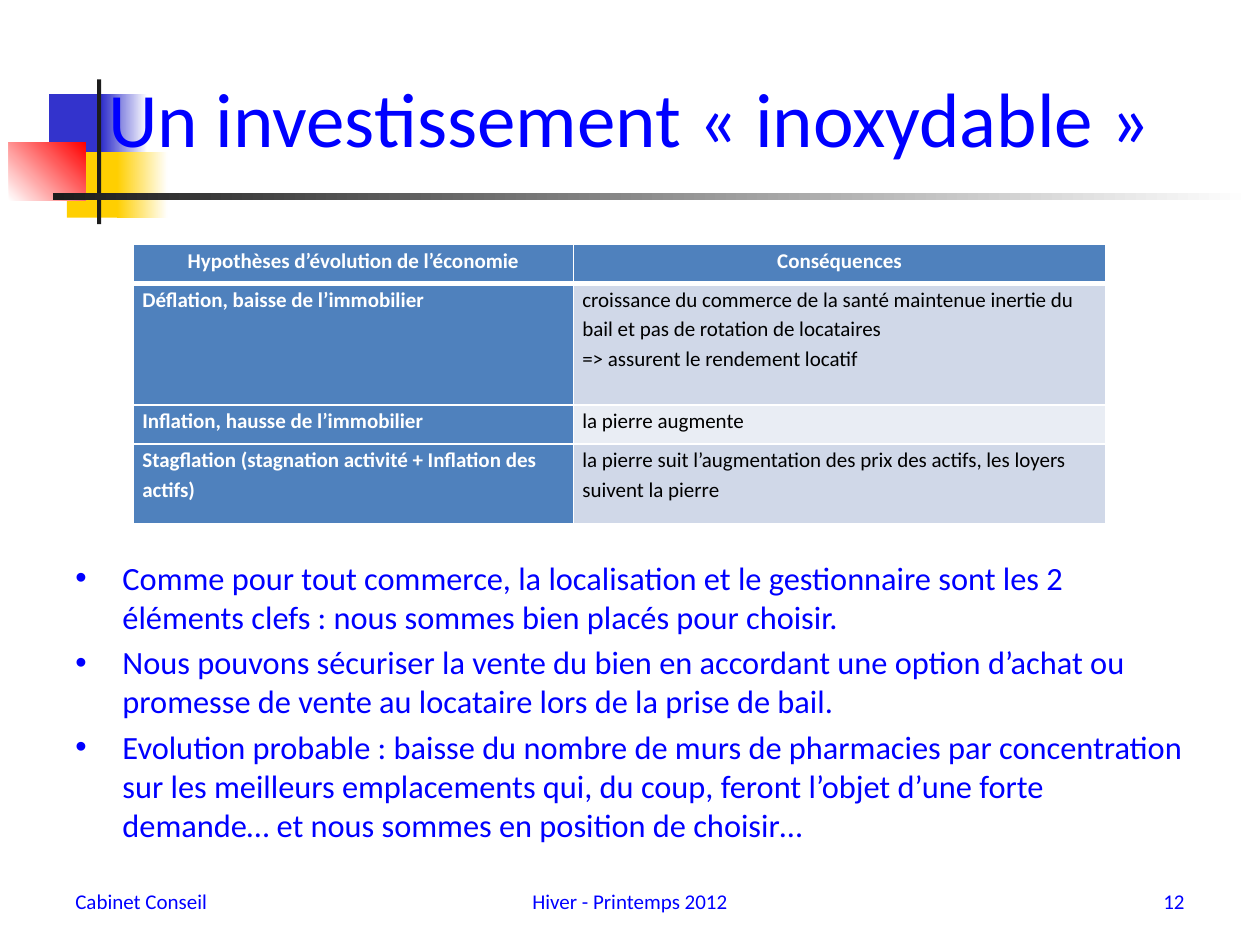
from lxml import etree
from pptx import Presentation
from pptx.dml.color import RGBColor
from pptx.enum.shapes import MSO_SHAPE
from pptx.enum.text import MSO_ANCHOR, PP_ALIGN
from pptx.oxml.ns import qn
from pptx.util import Cm, Pt

RECTANGLE = MSO_SHAPE.RECTANGLE
TOP, MIDDLE = MSO_ANCHOR.TOP, MSO_ANCHOR.MIDDLE
LEFT, CENTER, RIGHT = PP_ALIGN.LEFT, PP_ALIGN.CENTER, PP_ALIGN.RIGHT

THEME = {
    "font": "Calibri",
    "text": "0000FF", "white": "FFFFFF", "black": "000000",
    "blue": "3333CC", "yellow": "FFCF01", "red": "FF0000", "dark": "1C1C1C",
    "header": "4F81BD", "band": "D0D8E8", "light_band": "E9EDF4",
    "title_size": 44, "body_size": 18.5, "small_size": 12,
}

TITLE = "Un investissement «\u00a0inoxydable\u00a0»"
TABLE = [
    ("Hypothèses d’évolution de l’économie", "Conséquences"),
    ("Déflation, baisse de l’immobilier",
     "croissance du commerce de la santé maintenue inertie du bail et pas de "
     "rotation de locataires\n=> assurent le rendement locatif"),
    ("Inflation, hausse de l’immobilier", "la pierre augmente"),
    ("Stagflation (stagnation activité + Inflation des actifs)",
     "la pierre suit l’augmentation des prix des actifs, les loyers suivent la pierre"),
]
COLUMN_WIDTHS = (8.87, 10.73)
ROW_HEIGHTS = (0.79, 2.44, 0.79, 1.6)
BULLETS = [
    "Comme pour tout commerce, la localisation et le gestionnaire sont les 2 "
    "éléments clefs : nous sommes bien placés pour choisir.",
    "Nous pouvons sécuriser la vente du bien en accordant une option d’achat ou "
    "promesse de vente au locataire lors de la prise de bail.",
    "Evolution probable : baisse du nombre de murs de pharmacies par concentration "
    "sur les meilleurs emplacements qui, du coup, feront l’objet d’une forte "
    "demande… et nous sommes en position de choisir…",
]
# text, left, width, alignment
FOOTERS = [
    ("Cabinet Conseil", 1.27, 5.93, LEFT),
    ("Hiver - Printemps 2012", 8.68, 8.04, CENTER),
    ("12", 18.2, 5.93, RIGHT),
]
# left, top, width, height, colours (two make a gradient), gradient angle
DECORATIONS = [
    (0.99, 1.9, 1.22, 1.32, ("blue",), 0),
    (2.06, 1.9, 0.91, 1.32, ("blue", "white"), 0),
    (1.35, 3.07, 1.17, 1.32, ("yellow",), 0),
    (2.36, 3.07, 1.02, 1.32, ("yellow", "white"), 0),
    (0.18, 2.87, 1.55, 1.17, ("white", "red"), 45),
    (1.96, 1.6, 0.08, 2.92, ("dark",), 0),
    (1.07, 3.89, 24.16, 0.15, ("dark", "white"), 0),
]


def color(name):
    return RGBColor.from_string(THEME[name])


def write(frame, text, size, ink="text", bold=False, align=LEFT, anchor=TOP,
          line_spacing=None, space_before=None):
    """Fill a text frame, one paragraph for each line of text."""
    frame.text = text
    frame.word_wrap = True
    frame.vertical_anchor = anchor
    for paragraph in frame.paragraphs:
        paragraph.alignment = align
        if line_spacing:
            paragraph.line_spacing = line_spacing
        if space_before:
            paragraph.space_before = Pt(space_before)
        for run in paragraph.runs:
            run.font.name = THEME["font"]
            run.font.size = Pt(THEME[size])
            run.font.bold = bold
            run.font.color.rgb = color(ink)


def add_text(slide, box, text, size, **text_format):
    shape = slide.shapes.add_textbox(*map(Cm, box))
    write(shape.text_frame, text, size, **text_format)
    return shape


def add_decoration(slide, left, top, width, height, colors, angle):
    shape = slide.shapes.add_shape(RECTANGLE, *map(Cm, (left, top, width, height)))
    shape.shadow.inherit = False
    shape.line.fill.background()
    if len(colors) == 1:
        shape.fill.solid()
        shape.fill.fore_color.rgb = color(colors[0])
        return
    shape.fill.gradient()
    shape.fill.gradient_angle = angle
    for stop, position, name in zip(shape.fill.gradient_stops, (0, 1), colors):
        stop.position = position
        stop.color.rgb = color(name)


def add_bullet(paragraph, indent):
    properties = paragraph._p.get_or_add_pPr()
    properties.set("marL", str(Cm(indent)))
    properties.set("indent", str(-Cm(indent)))
    font = etree.SubElement(properties, qn("a:buFont"))
    font.set("typeface", "Arial")
    etree.SubElement(properties, qn("a:buChar")).set("char", "•")


def set_borders(cell, widths):
    """Draw white borders; widths in points for left, right, top, bottom."""
    properties = cell._tc.get_or_add_tcPr()
    for index, (side, width) in enumerate(zip("LRTB", widths)):
        line = etree.Element(qn(f"a:ln{side}"), w=str(Pt(width)))
        fill = etree.SubElement(line, qn("a:solidFill"))
        etree.SubElement(fill, qn("a:srgbClr")).set("val", THEME["white"])
        properties.insert(index, line)


def add_hypothesis_table(slide):
    box = (2.69, 4.93, sum(COLUMN_WIDTHS), sum(ROW_HEIGHTS))
    table = slide.shapes.add_table(
        len(TABLE), len(COLUMN_WIDTHS), *map(Cm, box)).table
    for column, width in zip(table.columns, COLUMN_WIDTHS):
        column.width = Cm(width)
    for row, height in zip(table.rows, ROW_HEIGHTS):
        row.height = Cm(height)
    for row, texts in enumerate(TABLE):
        for column, text in enumerate(texts):
            cell = table.cell(row, column)
            heading = row == 0 or column == 0
            band = "band" if row % 2 else "light_band"
            # The last row is banded like the first one below the header.
            if row == len(TABLE) - 1:
                band = "band"
            cell.margin_left = cell.margin_right = Cm(0.18)
            cell.margin_top = cell.margin_bottom = 0
            cell.fill.solid()
            cell.fill.fore_color.rgb = color("header" if heading else band)
            write(cell.text_frame, text, "small_size", bold=heading,
                  ink="white" if heading else "black",
                  align=LEFT if row else CENTER, line_spacing=1.15)
            set_borders(cell, (1, 1, 3 if row == 1 else 1, 1 if row else 3))


def main():
    presentation = Presentation()
    presentation.slide_width, presentation.slide_height = Cm(25.4), Cm(19.05)
    slide = presentation.slides.add_slide(presentation.slide_layouts[5])

    for decoration in DECORATIONS:
        add_decoration(slide, *decoration)

    title = slide.shapes.title
    title.left, title.top, title.width, title.height = map(
        Cm, (1.27, 0.76, 22.86, 3.18))
    write(title.text_frame, TITLE, "title_size", align=CENTER, anchor=MIDDLE)
    title.element.getparent().append(title.element)  # in front of the decorations

    body = add_text(slide, (1.27, 11.13, 22.86, 5.89), "\n".join(BULLETS),
                    "body_size", space_before=3.7)
    for paragraph in body.text_frame.paragraphs:
        add_bullet(paragraph, 0.95)

    for text, left, width, align in FOOTERS:
        add_text(slide, (left, 17.65, width, 1.02), text, "small_size",
                 align=align, anchor=MIDDLE)

    add_hypothesis_table(slide)
    presentation.save("out.pptx")


if __name__ == "__main__":
    main()
